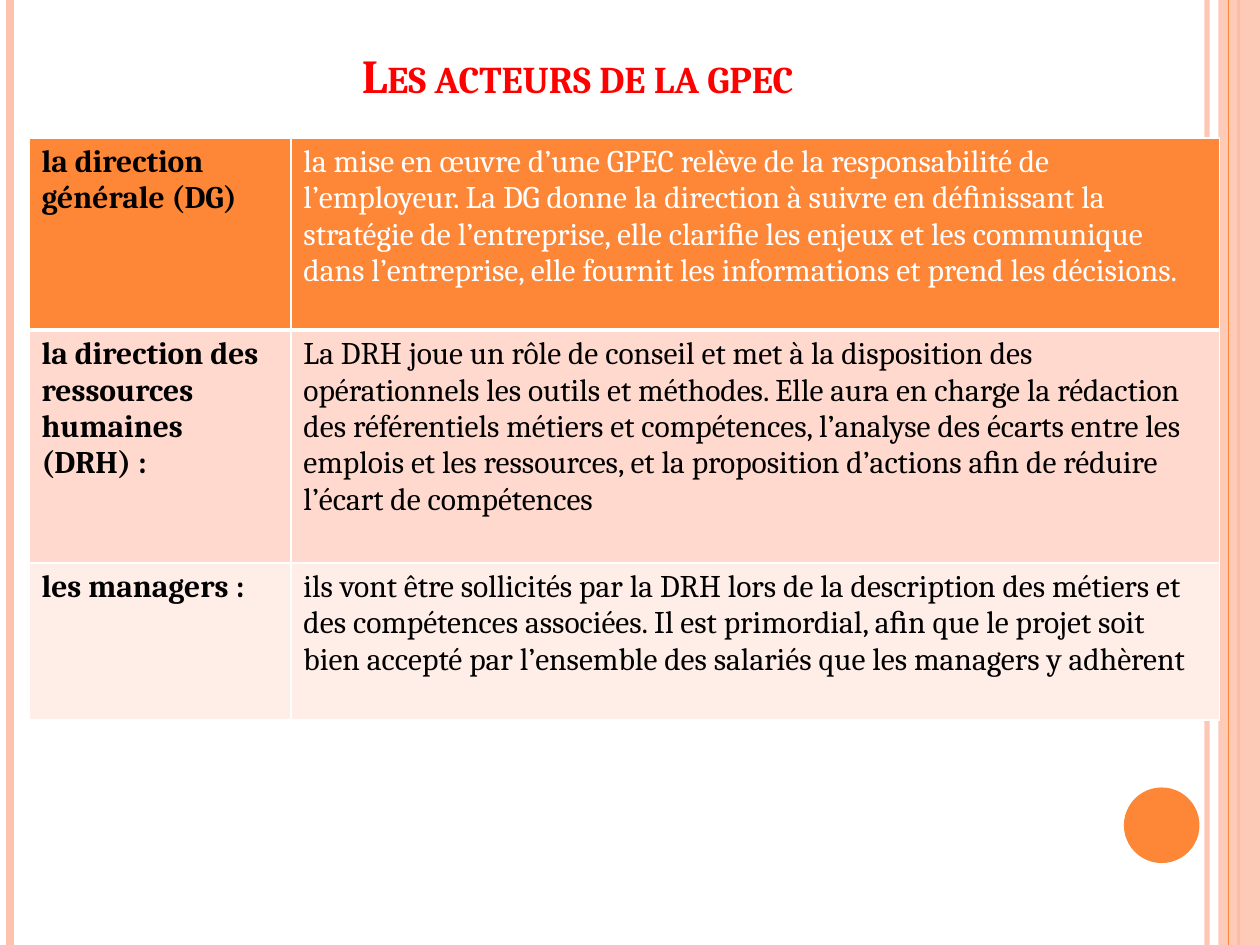
from lxml import etree
from pptx import Presentation
from pptx.dml.color import RGBColor
from pptx.enum.shapes import MSO_CONNECTOR, MSO_SHAPE
from pptx.enum.text import MSO_ANCHOR, PP_ALIGN
from pptx.oxml.ns import qn
from pptx.util import Inches, Pt

STRAIGHT = MSO_CONNECTOR.STRAIGHT
RECTANGLE, OVAL = MSO_SHAPE.RECTANGLE, MSO_SHAPE.OVAL
BOTTOM, CENTER = MSO_ANCHOR.BOTTOM, PP_ALIGN.CENTER

WIDTH, HEIGHT = Inches(10), Inches(7.5)
FONT = "Cambria"
COLORS = {
    "orange": "FE8637", "peach": "FEC3AE", "band": "FFD9CE", "pale": "FFEDE8",
    "white": "FFFFFF", "black": "000000", "red": "FF0000",
}
RULES = [
    (9.58, "peach", 3, 93),
    (0.08, "peach", 4.5, 100),
    (9.83, "orange", 1.5, 100),
    (9.75, "orange", 0.75, 100),
]
ACTORS = [
    ("la direction générale (DG)",
     "la mise en œuvre d’une GPEC relève de la responsabilité de l’employeur. "
     "La DG donne la direction à suivre en déﬁnissant la stratégie de l’entreprise, "
     "elle clariﬁe les enjeux et les communique dans l’entreprise, elle fournit les "
     "informations et prend les décisions."),
    ("la direction des ressources humaines (DRH) :",
     "La DRH joue un rôle de conseil et met à la disposition des opérationnels les "
     "outils et méthodes. Elle aura en charge la rédaction des référentiels métiers et "
     "compétences, l’analyse des écarts entre les emplois et les ressources, et la "
     "proposition d’actions aﬁn de réduire l’écart de compétences"),
    ("les managers :",
     "ils vont être sollicités par la DRH lors de la description des métiers et des "
     "compétences associées. Il est primordial, aﬁn que le projet soit bien accepté par "
     "l’ensemble des salariés que les managers y adhèrent"),
]
ROW_FILLS = ["orange", "band", "pale"]
ROW_SHARES = [0.33, 0.4, 0.27]
COLUMN_SHARES = [0.22, 0.78]


def rgb(name):
    """Return the named palette colour."""
    return RGBColor.from_string(COLORS[name])


def share_box(left, top, width, height):
    """Turn shares of the slide into a box of lengths."""
    return (int(left * WIDTH), int(top * HEIGHT),
            int(width * WIDTH), int(height * HEIGHT))


def set_opacity(shape, percent):
    """Make the solid colours of a shape partly transparent."""
    for color in shape.element.spPr.iter(qn("a:srgbClr")):
        etree.SubElement(color, qn("a:alpha"), val=str(percent * 1000))


def style_run(run, size, color, bold):
    """Give a run its font, size, colour and weight."""
    run.font.name, run.font.size, run.font.bold = FONT, Pt(size), bold
    run.font.color.rgb = rgb(color)


def add_rule(page, box, x, color, weight, opacity):
    """Draw one vertical rule over the full height of the box."""
    left, top, _, height = box
    rule = page.shapes.add_connector(
        STRAIGHT, left + Inches(x), top, left + Inches(x), top + height)
    rule.line.color.rgb = rgb(color)
    rule.line.width = Pt(weight)
    if opacity < 100:
        set_opacity(rule, opacity)
    etree.SubElement(rule.element.spPr, qn("a:effectLst"))


def add_plain_shape(page, kind, box, color):
    """Draw a filled shape without outline or shadow."""
    shape = page.shapes.add_shape(kind, *box)
    shape.shadow.inherit = False
    shape.fill.solid()
    shape.fill.fore_color.rgb = rgb(color)
    shape.line.fill.background()
    return shape


def add_frame(page, box):
    """Draw the side rules, the right band and the round marker."""
    left, top, width, height = box
    for rule in RULES[:3]:
        add_rule(page, box, *rule)
    band = (left + int(0.967 * width), top, int(0.033 * width), height)
    set_opacity(add_plain_shape(page, RECTANGLE, band, "peach"), 87)
    add_rule(page, box, *RULES[3])
    marker = (left + int(0.892 * width), top + int(height * 5 / 6),
              int(0.06 * width), int(0.08 * height))
    add_plain_shape(page, OVAL, marker, "orange")


def add_title(page, box, text):
    """Place the small-caps title at the bottom of its box."""
    frame = page.shapes.add_textbox(*box).text_frame
    frame.word_wrap = True
    frame.vertical_anchor = BOTTOM
    frame.text = text
    para = frame.paragraphs[0]
    para.alignment = CENTER
    span = para.runs[0]
    style_run(span, 27, "red", True)
    span.font._element.set("cap", "small")


def add_borders(cell, top, bottom):
    """Add white borders, with the top and bottom weights given."""
    properties = cell._tc.get_or_add_tcPr()
    for side, weight in zip("LRTB", (1, 1, top, bottom)):
        line = etree.SubElement(properties, qn(f"a:ln{side}"), w=str(Pt(weight)))
        fill = etree.SubElement(line, qn("a:solidFill"))
        etree.SubElement(fill, qn("a:srgbClr"), val=COLORS["white"])


def add_actors(page, box, actors):
    """Fill the table that gives each actor and its role."""
    _, _, width, height = box
    table = page.shapes.add_table(len(actors), len(COLUMN_SHARES), *box).table
    for column, share in zip(table.columns, COLUMN_SHARES):
        column.width = int(width * share)
    for index, texts in enumerate(actors):
        table.rows[index].height = int(height * ROW_SHARES[index])
        for place, text in enumerate(texts):
            cell = table.cell(index, place)
            add_borders(cell, 3 if index == 1 else 1, 3 if index == 0 else 1)
            cell.fill.solid()
            cell.fill.fore_color.rgb = rgb(ROW_FILLS[index])
            cell.text = text
            color = "white" if (index, place) == (0, 1) else "black"
            style_run(cell.text_frame.paragraphs[0].runs[0], 18, color, place == 0)


def main():
    """Build the slide and save it."""
    deck = Presentation()
    deck.slide_width, deck.slide_height = WIDTH, HEIGHT
    page = deck.slides.add_slide(deck.slide_layouts[6])
    add_frame(page, share_box(0, 0, 1, 1))
    add_title(page, share_box(0.05, 0.04, 0.817, 0.075), "Les acteurs de la gpec")
    add_actors(page, share_box(0.023, 0.146, 0.945, 0.616), ACTORS)
    deck.save("out.pptx")


if __name__ == "__main__":
    main()
